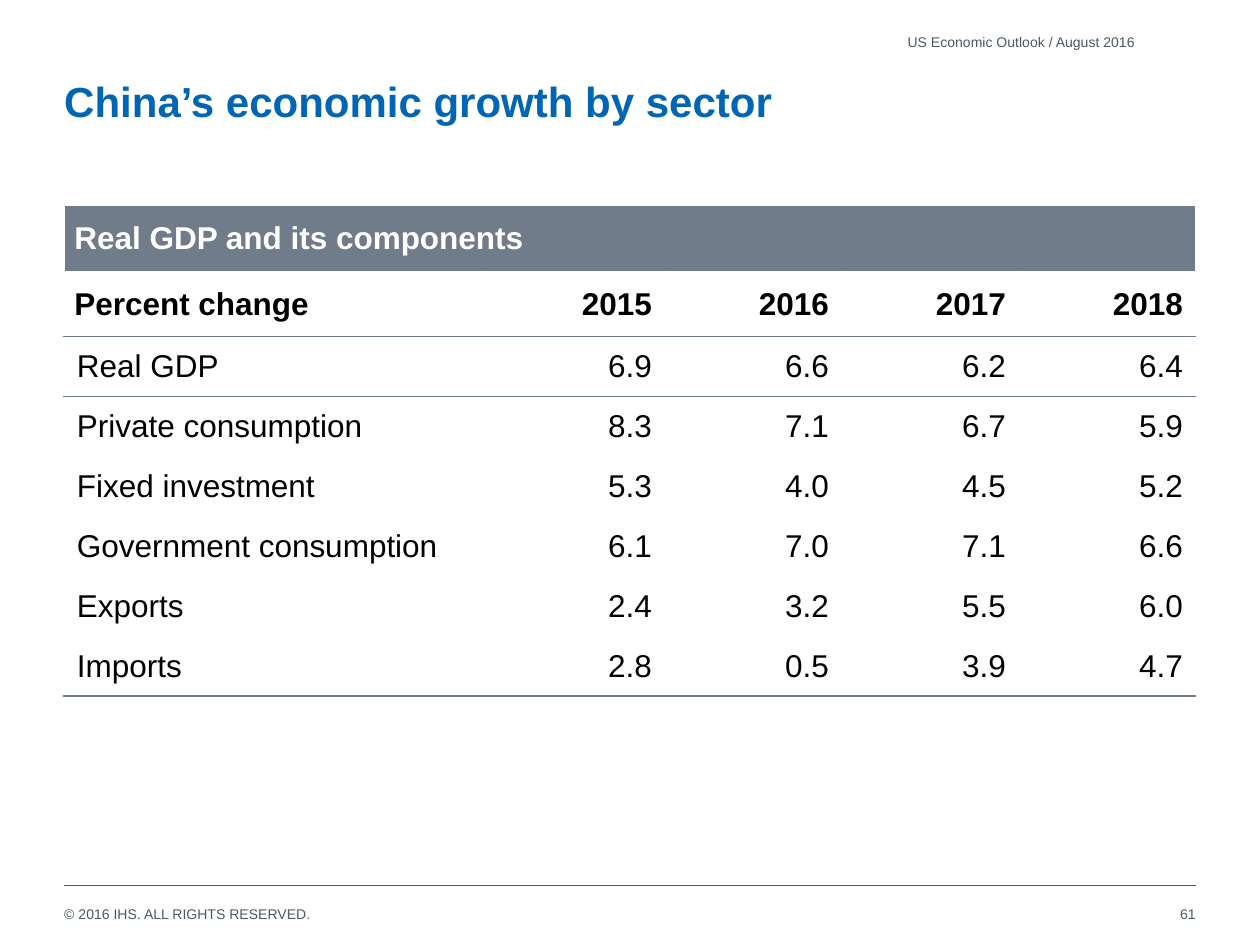
from dataclasses import dataclass

from lxml import etree
from pptx import Presentation
from pptx.dml.color import RGBColor
from pptx.enum.shapes import MSO_CONNECTOR
from pptx.enum.text import MSO_ANCHOR, MSO_AUTO_SIZE, PP_ALIGN
from pptx.oxml.ns import qn
from pptx.util import Inches, Pt

LEFT, RIGHT = PP_ALIGN.LEFT, PP_ALIGN.RIGHT
TOP, MIDDLE = MSO_ANCHOR.TOP, MSO_ANCHOR.MIDDLE
NO_AUTOFIT = MSO_AUTO_SIZE.NONE
STRAIGHT = MSO_CONNECTOR.STRAIGHT
TITLE_ONLY = 5


@dataclass(frozen=True)
class Theme:
    font: str = "Arial"
    title_color: str = "0066B3"
    small_color: str = "495965"
    band_color: str = "707C8A"
    white: str = "FFFFFF"
    black: str = "000000"
    title_size: int = 24
    table_size: int = 18
    small_size: int = 8


THEME = Theme()
MARGIN, CONTENT_WIDTH = 0.51, 8.98
YEARS = ["2015", "2016", "2017", "2018"]
GROWTH = [
    ("Real GDP", "6.9", "6.6", "6.2", "6.4"),
    ("Private consumption", "8.3", "7.1", "6.7", "5.9"),
    ("Fixed investment", "5.3", "4.0", "4.5", "5.2"),
    ("Government consumption", "6.1", "7.0", "7.1", "6.6"),
    ("Exports", "2.4", "3.2", "5.5", "6.0"),
    ("Imports", "2.8", "0.5", "3.9", "4.7"),
]


def write(frame, text, size, color, bold=False, align=LEFT):
    paragraph = frame.paragraphs[0]
    paragraph.alignment = align
    run = paragraph.add_run()
    run.text = text
    font = run.font
    font.name, font.size, font.bold = THEME.font, Pt(size), bold
    font.color.rgb = RGBColor.from_string(color)


def set_frame(frame, anchor):
    frame.margin_left = frame.margin_right = 0
    frame.margin_top = frame.margin_bottom = 0
    frame.word_wrap = True
    frame.auto_size = NO_AUTOFIT
    frame.vertical_anchor = anchor


def add_small_text(slide, box, text, align=LEFT, anchor=MIDDLE):
    frame = slide.shapes.add_textbox(*map(Inches, box)).text_frame
    set_frame(frame, anchor)
    write(frame, text, THEME.small_size, THEME.small_color, align=align)


def add_heading(slide, box):
    title = slide.shapes.title
    title.left, title.top, title.width, title.height = map(Inches, box)
    set_frame(title.text_frame, TOP)
    write(title.text_frame, "China’s economic growth by sector",
          THEME.title_size, THEME.title_color, bold=True)


def add_footer(slide, box):
    left, top, width, height = box
    rule = slide.shapes.add_connector(
        STRAIGHT, Inches(left), Inches(top), Inches(left + width), Inches(top))
    rule.line.color.rgb = RGBColor.from_string(THEME.small_color)
    rule.line.width = Pt(0.5)
    etree.SubElement(rule._element.spPr, qn("a:effectLst"))
    add_small_text(slide, (left, top + 0.16, 6.85, 0.13),
                   "© 2016 IHS. ALL RIGHTS RESERVED.", anchor=TOP)
    add_small_text(slide, (left + width - 2.26, top + 0.02, 2.26, height),
                   "61", align=RIGHT)


def set_border(cell, side, color, points):
    properties = cell._tc.get_or_add_tcPr()
    line = etree.Element(qn(f"a:{side}"), w=str(Pt(points)))
    fill = etree.SubElement(line, qn("a:solidFill"))
    etree.SubElement(fill, qn("a:srgbClr"), val=color)
    position = len(properties.findall(qn("a:lnT")))
    properties.insert(position, line)


def rule_below(table, row, color, points):
    last = len(table.rows) - 1
    for column in range(len(table.columns)):
        set_border(table.cell(row, column), "lnB", color, points)
        if row < last:
            set_border(table.cell(row + 1, column), "lnT", color, points)


def fill_cell(cell, text, color, bold, align, tight):
    cell.vertical_anchor = MIDDLE
    cell.margin_left = cell.margin_right = Inches(0.08 if tight else 0.1)
    cell.margin_top = cell.margin_bottom = Inches(0.06 if tight else 0.05)
    write(cell.text_frame, text, THEME.table_size, color, bold, align)


def add_growth_table(slide, box):
    rows = [("Percent change", *YEARS), *GROWTH]
    columns = len(rows[0])
    table = slide.shapes.add_table(
        len(rows) + 1, columns, *map(Inches, box)).table
    table.first_row = table.horz_banding = False
    label_width = 3.36
    value_width = (box[2] - label_width) / len(YEARS)
    for index, column in enumerate(table.columns):
        column.width = Inches(value_width if index else label_width)
    heights = [0.53, 0.51] + [0.476] * len(GROWTH)
    for row, height in zip(table.rows, heights):
        row.height = Inches(height)

    for cell in table.iter_cells():
        cell.fill.background()
    band = table.cell(0, 0)
    band.merge(table.cell(0, columns - 1))
    band.fill.solid()
    band.fill.fore_color.rgb = RGBColor.from_string(THEME.band_color)
    fill_cell(band, "Real GDP and its components", THEME.white, True, LEFT, True)

    for r, values in enumerate(rows, start=1):
        for c, text in enumerate(values):
            fill_cell(table.cell(r, c), text, THEME.black, bold=r == 1,
                      align=RIGHT if c else LEFT, tight=r == 1 and c == 0)

    rule_below(table, 0, THEME.white, 1.5)
    for row in (1, 2, len(rows)):
        rule_below(table, row, THEME.band_color, 1)


def main():
    deck = Presentation()
    deck.slide_width, deck.slide_height = Inches(10), Inches(7.5)
    slide = deck.slides.add_slide(deck.slide_layouts[TITLE_ONLY])
    add_footer(slide, (MARGIN, 7.03, CONTENT_WIDTH, 0.4))
    add_heading(slide, (MARGIN, 0.6, CONTENT_WIDTH, 0.87))
    add_small_text(slide, (MARGIN, 0.21, 8.5, 0.24),
                   "US Economic Outlook / August 2016", align=RIGHT)
    add_growth_table(slide, (MARGIN, 1.63, CONTENT_WIDTH, 3.9))
    deck.save("out.pptx")


if __name__ == "__main__":
    main()
